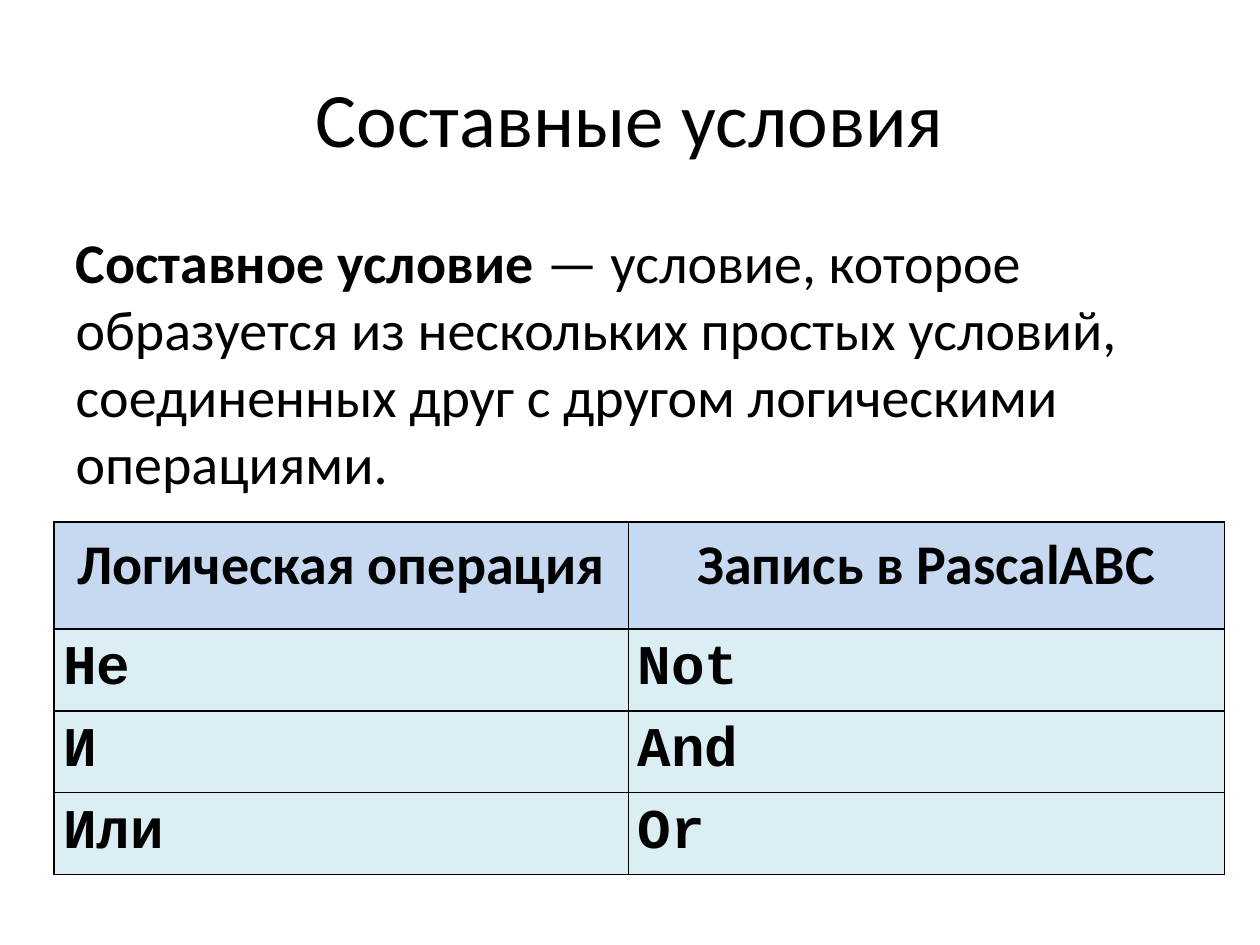
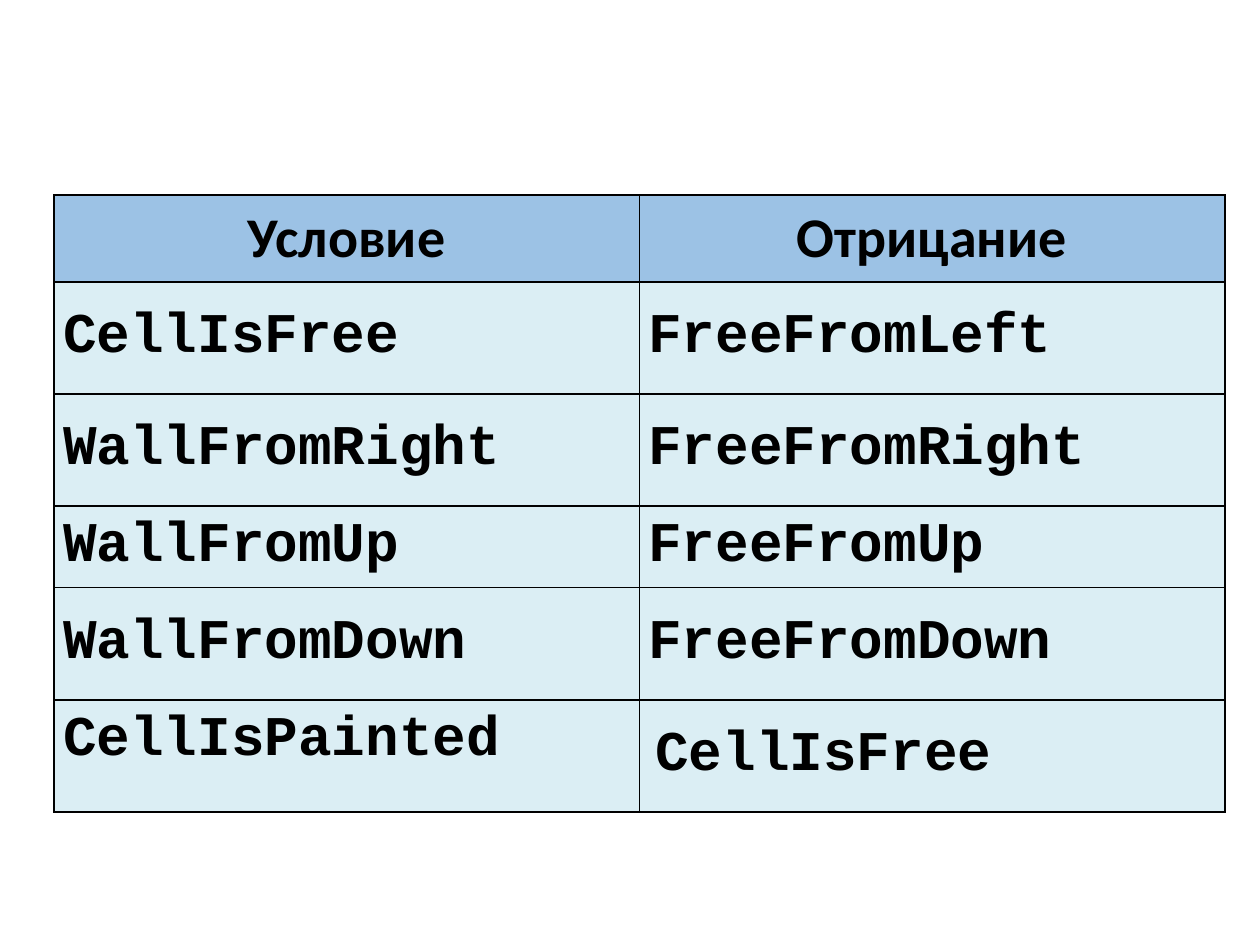
from lxml import etree
from pptx import Presentation
from pptx.dml.color import RGBColor
from pptx.enum import text as t
from pptx.oxml import ns
from pptx.util import Cm, Pt

# Shared look
BLACK = RGBColor(0x00, 0x00, 0x00)
PALE = RGBColor(0xC6, 0xD9, 0xF1)
BLUE = RGBColor(0x9C, 0xC2, 0xE5)
AQUA = RGBColor(0xDB, 0xEE, 0xF4)
SANS, MONO = "Calibri", "Courier New"
INSET = Cm(0.18)
LEFT = 1.09
MID, TOP = t.MSO_ANCHOR.MIDDLE, t.MSO_ANCHOR.TOP
CENTER, START = t.PP_ALIGN.CENTER, t.PP_ALIGN.LEFT


def write(para, words, size=32, font=SANS, bold=False, align=START):
    """Add one formatted run to a paragraph."""
    para.alignment = align
    run = para.add_run()
    run.text = words
    run.font.size, run.font.name, run.font.bold = Pt(size), font, bold
    run.font.color.rgb = BLACK


def place(shape, box):
    shape.left, shape.top, shape.width, shape.height = map(Cm, box)


def title(slide, words, box):
    head = slide.shapes.title
    place(head, box)
    head.text_frame.vertical_anchor = MID
    write(head.text_frame.paragraphs[0], words, size=44, align=CENTER)


def body(slide, term, rest, box):
    """Definition: a bold term and its meaning, without a bullet."""
    hold = slide.placeholders[1]
    place(hold, box)
    para = hold.text_frame.paragraphs[0]
    props = para._p.get_or_add_pPr()
    props.set("marL", "0")
    props.set("indent", "0")
    etree.SubElement(props, ns.qn("a:buNone"))
    write(para, term, bold=True)
    write(para, rest)


def border(cell):
    props = cell._tc.get_or_add_tcPr()
    for side in ("lnL", "lnR", "lnT", "lnB"):
        line = etree.SubElement(props, ns.qn("a:" + side), w=str(Pt(1)))
        fill = etree.SubElement(line, ns.qn("a:solidFill"))
        etree.SubElement(fill, ns.qn("a:srgbClr"), val=str(BLACK))


def grid(slide, rows, spot, cols, highs, shade, anchor=TOP):
    """Two-column table with a shaded header; returns the table."""
    frame = slide.shapes.add_table(len(rows), len(cols), *map(
        Cm, (*spot, sum(cols), sum(highs))))
    table = frame.table
    for col, wide in zip(table.columns, cols):
        col.width = Cm(wide)
    for i, (row, high) in enumerate(zip(rows, highs)):
        table.rows[i].height = Cm(high)
        for j, words in enumerate(row):
            cell = table.cell(i, j)
            border(cell)
            cell.fill.solid()
            cell.fill.fore_color.rgb = AQUA if i else shade
            cell.margin_left = cell.margin_right = INSET
            cell.margin_top = cell.margin_bottom = INSET
            cell.vertical_anchor = anchor if i else TOP
            write(cell.text_frame.paragraphs[0], words, bold=True,
                  font=MONO if i else SANS, align=START if i else CENTER)
    return table


def compound(deck):
    """Compound conditions and their logical operations."""
    slide = deck.slides.add_slide(deck.slide_layouts[1])
    title(slide, "Составные условия", (1.27, 0.76, 22.86, 3.18))
    body(slide, "Составное условие",
         " — условие, которое образуется из нескольких простых условий, "
         "соединенных друг с другом логическими операциями.",
         (1.27, 4.45, 22.86, 12.57))
    rows = [("Логическая операция", "Запись в PascalABC"),
            ("Не", "Not"), ("И", "And"), ("Или", "Or")]
    grid(slide, rows, (LEFT, 10.52), (11.58, 12.01),
         [2.16] + [1.65] * 3, PALE)


def negation(deck):
    """Conditions and their negations."""
    slide = deck.slides.add_slide(deck.slide_layouts[6])
    rows = [("Условие", "Отрицание"),
            ("CellIsFree", "FreeFromLeft"),
            ("WallFromRight", "FreeFromRight"),
            ("WallFromUp", "FreeFromUp"),
            ("WallFromDown", "FreeFromDown"),
            ("CellIsPainted", "CellIsFree")]
    tall, low = 2.26, 1.65
    table = grid(slide, rows, (LEFT, 3.93), (11.8, 11.8),
                 (1.75, tall, tall, low, tall, tall), BLUE, MID)
    # Last row: left cell sits high, right cell is set in slightly
    table.cell(5, 0).vertical_anchor = TOP
    table.cell(5, 1).margin_left = INSET + Cm(0.14)


def main():
    deck = Presentation()
    deck.slide_width, deck.slide_height = Cm(25.4), Cm(19.05)
    compound(deck)
    negation(deck)
    deck.save("out.pptx")


if __name__ == "__main__":
    main()
